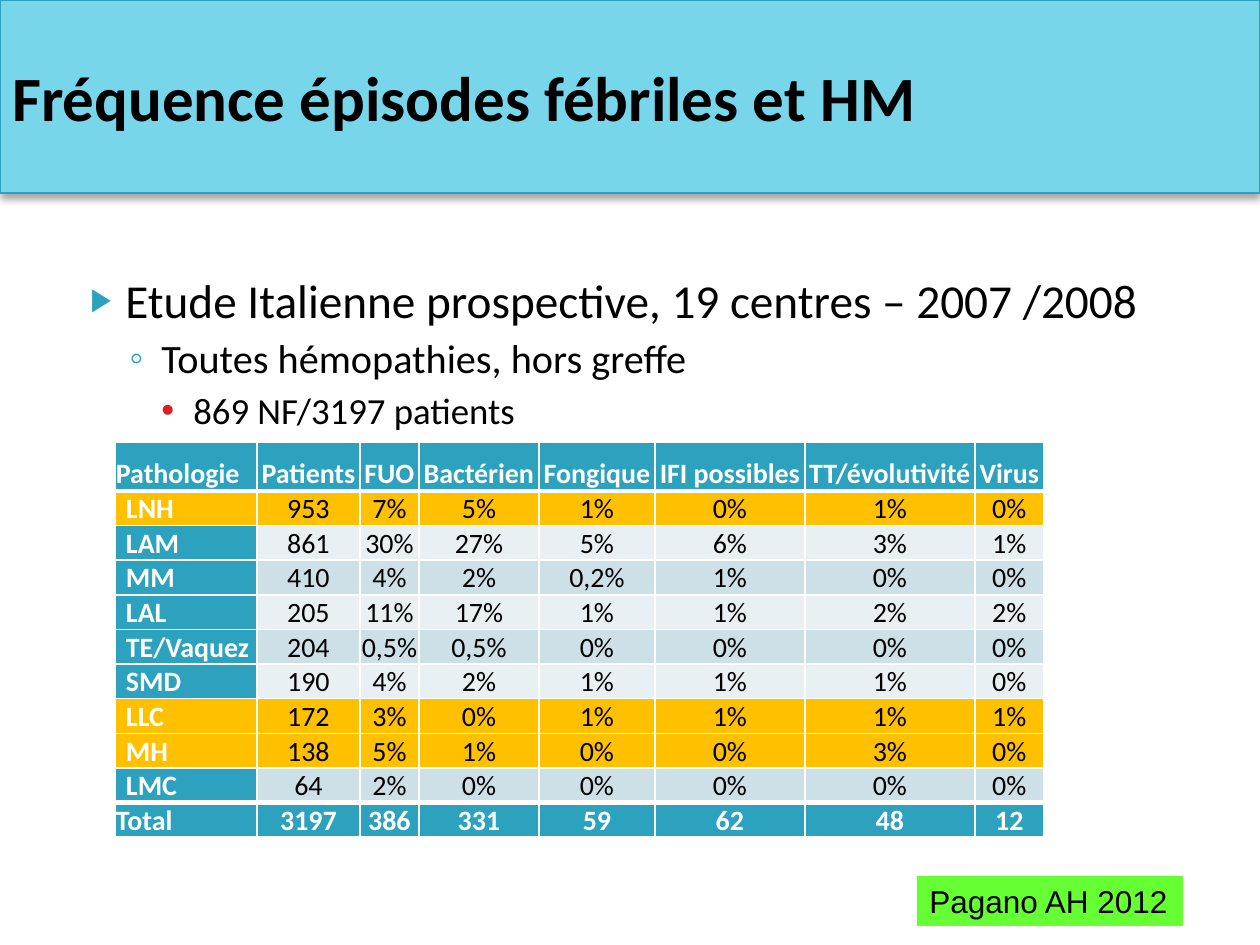
from lxml import etree
from pptx import Presentation
from pptx import util as u
from pptx.dml.color import RGBColor
from pptx.enum import shapes, text
from pptx.oxml.ns import qn

# Content
TITLE = "Fréquence épisodes fébriles et HM"
SOURCE = "Pagano AH 2012"
# text, size, space before (pt), left margin, hanging indent (px), bullet, bullet colour, bullet %
POINTS = [
    ("Etude Italienne prospective, 19 centres – 2007 /2008", 27, 4, 50, 35, "▶", "2DA2BF", 68),
    ("Toutes hémopathies, hors greffe", 23, 3.2, 86, 32, "◦", "2DA2BF", 100),
    ("869 NF/3197 patients", 21, 3.5, 118, 32, "•", "DA1F28", 100),
]
ROWS = [
    ("Pathologie", "Patients", "FUO", "Bactérien", "Fongique", "IFI possibles", "TT/évolutivité", "Virus"),
    ("LNH", "953", "7%", "5%", "1%", "0%", "1%", "0%"),
    ("LAM", "861", "30%", "27%", "5%", "6%", "3%", "1%"),
    ("MM", "410", "4%", "2%", "0,2%", "1%", "0%", "0%"),
    ("LAL", "205", "11%", "17%", "1%", "1%", "2%", "2%"),
    ("TE/Vaquez", "204", "0,5%", "0,5%", "0%", "0%", "0%", "0%"),
    ("SMD", "190", "4%", "2%", "1%", "1%", "1%", "0%"),
    ("LLC", "172", "3%", "0%", "1%", "1%", "1%", "1%"),
    ("MH", "138", "5%", "1%", "0%", "0%", "3%", "0%"),
    ("LMC", "64", "2%", "0%", "0%", "0%", "0%", "0%"),
    ("Total", "3197", "386", "331", "59", "62", "48", "12"),
]
HIGHLIGHTED = {"LNH", "LLC", "MH"}
COL_WIDTHS = [142, 103, 59, 120, 116, 150, 170, 69]
HEADER_HEIGHT, ROW_HEIGHT, TABLE_HEIGHT = 49, 33, 398

BLACK = RGBColor(0x00, 0x00, 0x00)
WHITE = RGBColor(0xFF, 0xFF, 0xFF)
SKY = RGBColor(0x78, 0xD6, 0xEA)
TEAL = RGBColor(0x2D, 0xA2, 0xBF)
GOLD = RGBColor(0xFF, 0xC0, 0x00)
GREEN = RGBColor(0x66, 0xFF, 0x33)
BANDS = [RGBColor(0xCD, 0xE0, 0xE8), RGBColor(0xE8, 0xF0, 0xF4)]


def px(n):
    return u.Emu(round(n * 914400 / 126))


def add(parent, tag, **attrs):
    return etree.SubElement(parent, qn(tag), {k: str(v) for k, v in attrs.items()})


def style(p, size, color, bold=False, font="Calibri"):
    for r in p.runs:
        r.font.name, r.font.size, r.font.bold = font, u.Pt(size), bold
        r.font.color.rgb = color


def add_box(s, x, y, w, h, fill, label):
    sp = s.shapes.add_shape(shapes.MSO_SHAPE.RECTANGLE, px(x), px(y), px(w), px(h))
    sp.shadow.inherit = False
    sp.fill.solid()
    sp.fill.fore_color.rgb = fill
    sp.line.fill.background()
    sp.text_frame.text = label
    sp.text_frame.paragraphs[0].alignment = text.PP_ALIGN.LEFT
    return sp


def add_bullet(p, left, hang, char, color, percent):
    pPr = p._p.get_or_add_pPr()
    pPr.set("marL", str(px(left)))
    pPr.set("indent", str(-px(hang)))
    add(add(pPr, "a:buClr"), "a:srgbClr", val=color)
    add(pPr, "a:buSzPct", val=percent * 1000)
    add(pPr, "a:buFont", typeface="Arial")
    add(pPr, "a:buChar", char=char)


def set_borders(cell, top, bottom):
    tcPr = cell._tc.get_or_add_tcPr()
    for i, (side, width) in enumerate([("L", 1), ("R", 1), ("T", top), ("B", bottom)]):
        ln = etree.Element(qn(f"a:ln{side}"), w=str(u.Pt(width)))
        add(add(ln, "a:solidFill"), "a:srgbClr", val=str(WHITE))
        tcPr.insert(i, ln)


prs = Presentation()
prs.slide_width, prs.slide_height = px(1260), px(945)
s = prs.slides.add_slide(prs.slide_layouts[6])

# Title band with soft shadow
band = add_box(s, 0, 0, 1260, 193, SKY, TITLE)
band.line.color.rgb = TEAL
band.line.width = u.Pt(0.75)
band.text_frame.vertical_anchor = text.MSO_ANCHOR.MIDDLE
style(band.text_frame.paragraphs[0], 36, BLACK, bold=True)
effects = band._element.spPr.find(qn("a:effectLst"))
shadow = add(effects, "a:outerShdw", blurRad=u.Pt(4), dist=u.Pt(3), dir=5400000, rotWithShape=0)
add(add(shadow, "a:srgbClr", val=str(BLACK)), "a:alpha", val=35000)

# Bulleted outline
tf = s.shapes.add_textbox(px(63), px(265), px(1134), px(563)).text_frame
tf.word_wrap = True
for i, (line, size, before, *bullet) in enumerate(POINTS):
    p = tf.paragraphs[0] if i == 0 else tf.add_paragraph()
    p.text = line
    p.level = i
    p.space_before = u.Pt(before)
    add_bullet(p, *bullet)
    style(p, size, BLACK)

# Source label
label = add_box(s, 917, 876, 266, 50, GREEN, SOURCE)
label.text_frame.word_wrap = False
label.text_frame.auto_size = text.MSO_AUTO_SIZE.SHAPE_TO_FIT_TEXT
style(label.text_frame.paragraphs[0], 18, BLACK, font="Arial")

# Frequency table
last = len(ROWS) - 1
frame = s.shapes.add_table(len(ROWS), len(COL_WIDTHS), px(115), px(442),
                           px(sum(COL_WIDTHS)), px(TABLE_HEIGHT))
table = frame.table
for col, width in zip(table.columns, COL_WIDTHS):
    col.width = px(width)
for i, values in enumerate(ROWS):
    table.rows[i].height = px(ROW_HEIGHT if i else HEADER_HEIGHT)
    outer = i in (0, last)
    for j, value in enumerate(values):
        cell = table.cell(i, j)
        cell.text = value
        strong = outer or j == 0
        cell.margin_left = px(11 if j == 0 and not outer else 1)
        cell.margin_right = cell.margin_top = px(1)
        cell.margin_bottom = 0
        cell.vertical_anchor = text.MSO_ANCHOR.BOTTOM if outer else text.MSO_ANCHOR.MIDDLE
        p = cell.text_frame.paragraphs[0]
        p.alignment = text.PP_ALIGN.CENTER if j else text.PP_ALIGN.LEFT
        style(p, 16, WHITE if strong else BLACK, bold=strong)
        cell.fill.solid()
        cell.fill.fore_color.rgb = (GOLD if values[0] in HIGHLIGHTED
                                    else TEAL if strong else BANDS[(i + 1) % 2])
        set_borders(cell, top=3 if i in (1, last) else 1, bottom=3 if i in (0, last - 1) else 1)
frame.height = px(TABLE_HEIGHT)

prs.save("out.pptx")
